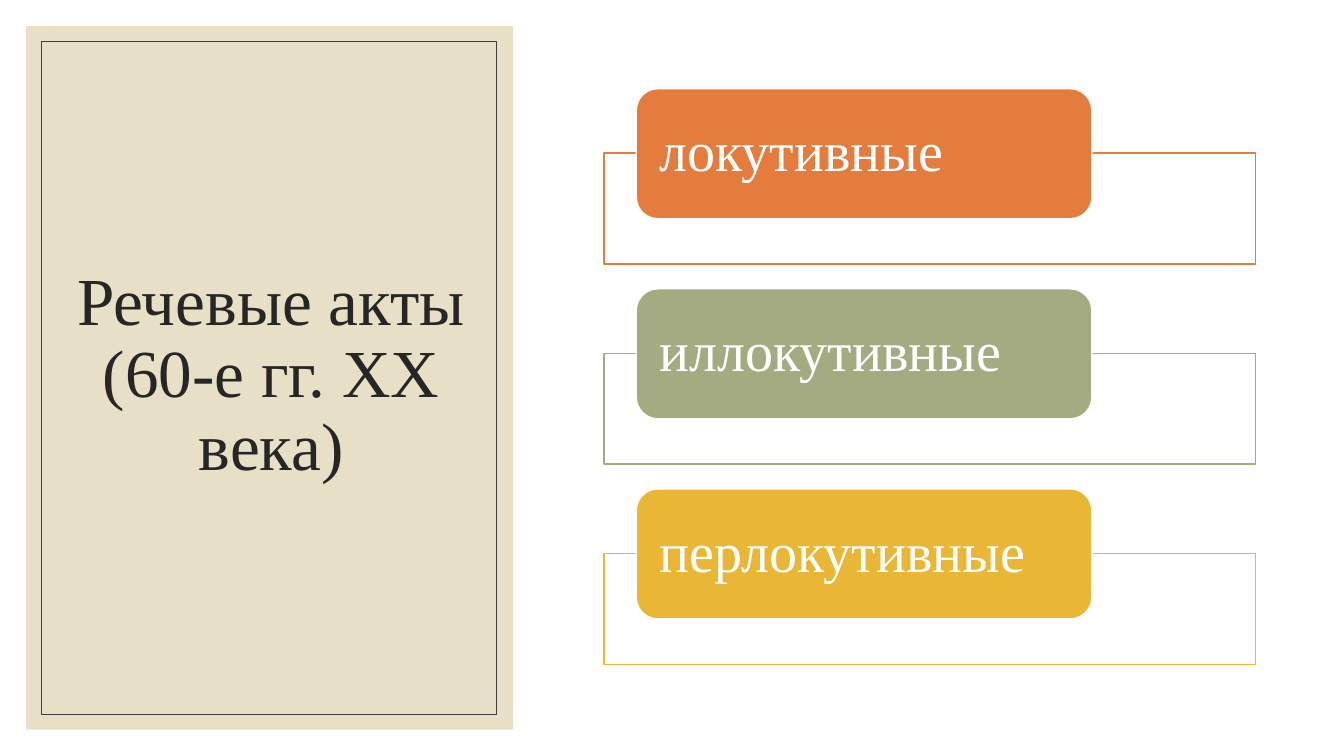
import pptx
import pptx.util
import pptx.dml.color
import pptx.enum.shapes
import pptx.enum.text
import pptx.oxml.ns
import pptx.oxml.xmlchemy
from pptx.util import Inches

SHAPES = pptx.enum.shapes.MSO_SHAPE
ALIGN = pptx.enum.text.PP_ALIGN
FONT = "Times New Roman"
ACTS = [
    ("локутивные", "E37C3D"),
    ("иллокутивные", "A5AB81"),
    ("перлокутивные", "E9B635"),
]
FIRST_TOP = 0.88
LAST_TOP = 4.85
FRAME_DROP = 0.64


def color(value):
    return pptx.dml.color.RGBColor.from_string(value)


def apply(target, formats):
    for name, value in formats.items():
        setattr(target, name, value)


def add_box(page, kind, place, fill=None, line=None, width=1, opacity=None):
    box = page.shapes.add_shape(kind, *map(Inches, place))
    box.shadow.inherit = False
    if fill:
        box.fill.solid()
        box.fill.fore_color.rgb = color(fill)
    else:
        box.fill.background()
    if line:
        box.line.color.rgb = color(line)
        box.line.width = pptx.util.Pt(width)
    else:
        box.line.fill.background()
    if opacity:
        solid = box.element.spPr.find(pptx.oxml.ns.qn("a:solidFill"))
        tint = solid.find(pptx.oxml.ns.qn("a:srgbClr"))
        alpha = pptx.oxml.xmlchemy.OxmlElement("a:alpha")
        alpha.set("val", str(opacity * 1000))
        tint.append(alpha)
    return box


def write_text(box, text, size, ink, align, side=0.1, edge=0.05):
    frame = box.text_frame
    apply(frame, {
        "word_wrap": True,
        "vertical_anchor": pptx.enum.text.MSO_ANCHOR.MIDDLE,
        "margin_left": Inches(side),
        "margin_right": Inches(side),
        "margin_top": Inches(edge),
        "margin_bottom": Inches(edge),
    })
    para = frame.paragraphs[0]
    apply(para, {"alignment": align, "line_spacing": 0.9})
    span = para.add_run()
    span.text = text
    apply(span.font, {"name": FONT, "size": pptx.util.Pt(size)})
    span.font.color.rgb = color(ink)


def add_title_panel(page):
    add_box(page, SHAPES.RECTANGLE, (0.26, 0.26, 4.83, 6.98), fill="E7E0C7")
    title = page.shapes.add_textbox(*map(Inches, (0.63, 0.61, 4.12, 6.24)))
    write_text(title, "Речевые акты (60-е гг. XX века)", 48, "262626", ALIGN.CENTER)
    add_box(page, SHAPES.RECTANGLE, (0.41, 0.41, 4.51, 6.68), line="404040", width=0.5)


def add_act(page, top, name, accent):
    add_box(page, SHAPES.RECTANGLE, (5.99, top + FRAME_DROP, 6.46, 1.1),
            fill="FFFFFF", line=accent, opacity=90)
    label = add_box(page, SHAPES.ROUNDED_RECTANGLE, (6.31, top, 4.52, 1.29),
                    fill=accent, line="FFFFFF")
    write_text(label, name, 40, "FFFFFF", ALIGN.LEFT, side=0.17, edge=0)


def main():
    deck = pptx.Presentation()
    apply(deck, {"slide_width": Inches(13.33), "slide_height": Inches(7.5)})
    page = deck.slides.add_slide(deck.slide_layouts[6])
    page.background.fill.solid()
    page.background.fill.fore_color.rgb = color("FFFFFF")
    add_title_panel(page)
    pitch = (LAST_TOP - FIRST_TOP) / (len(ACTS) - 1)
    for index, (name, accent) in enumerate(ACTS):
        add_act(page, FIRST_TOP + index * pitch, name, accent)
    deck.save("out.pptx")


if __name__ == "__main__":
    main()
